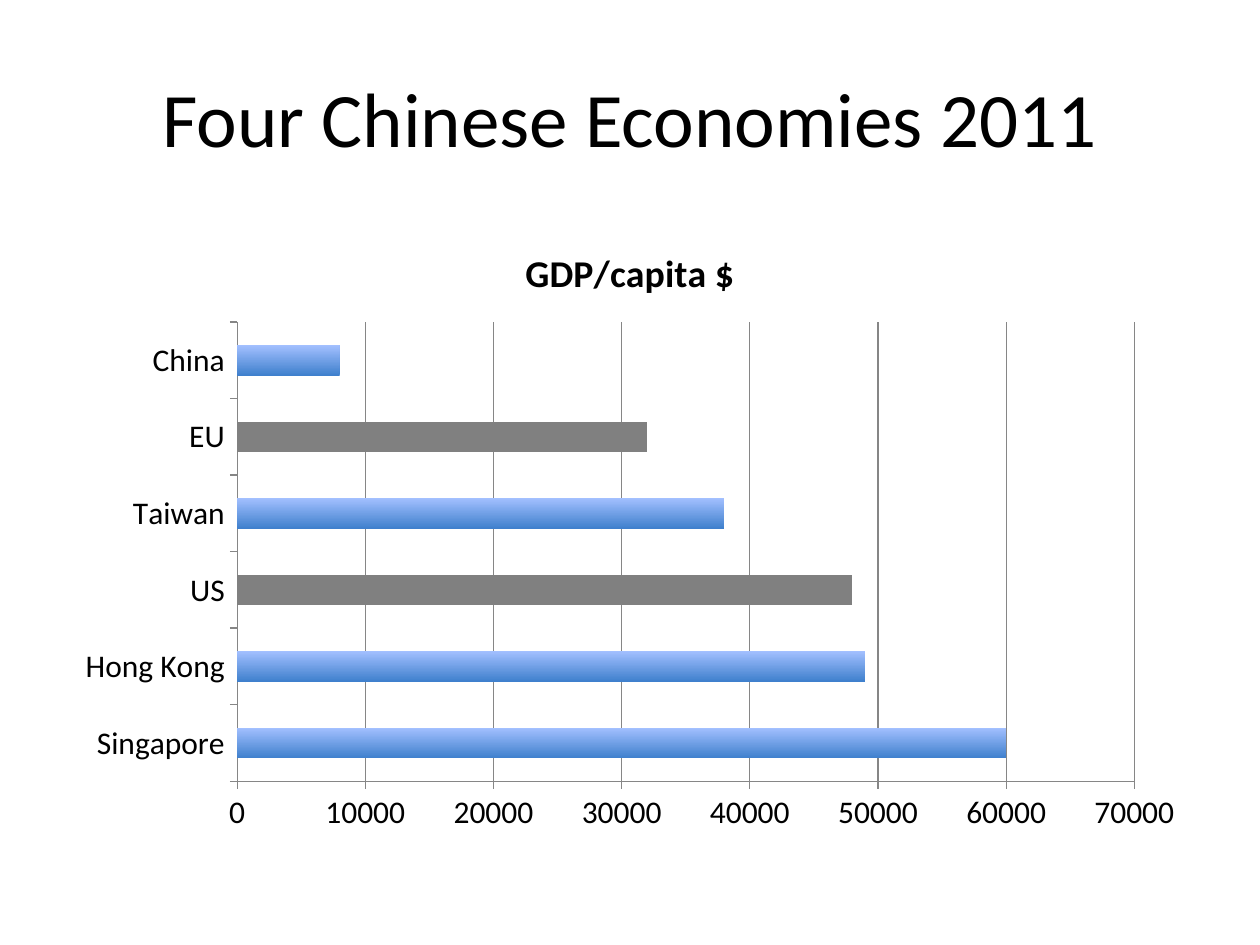
from pptx import Presentation
from pptx.chart.data import CategoryChartData
from pptx.dml.color import RGBColor
from pptx.enum.chart import XL_CHART_TYPE, XL_TICK_MARK
from pptx.enum.text import MSO_ANCHOR, PP_ALIGN
from pptx.util import Pt

BAR = XL_CHART_TYPE.BAR_CLUSTERED
OUTSIDE = XL_TICK_MARK.OUTSIDE
MIDDLE = MSO_ANCHOR.MIDDLE
CENTER = PP_ALIGN.CENTER

FONT = "Calibri"
COLORS = {"text": "000000", "axis": "868686", "region": "808080",
          "bar_low": "3F80CD", "bar_high": "A3C0FF"}
GDP = {"Singapore": 60000, "Hong Kong": 49000, "US": 48000,
       "Taiwan": 38000, "EU": 32000, "China": 8000}
COMPARISONS = ("US", "EU")


def rgb(name):
    return RGBColor.from_string(COLORS[name])


def format_font(font, size, bold=False, color="text"):
    font.name = FONT
    font.size = Pt(size)
    font.bold = bold
    font.color.rgb = rgb(color)


def write_text(tf, text, align=CENTER, **fmt):
    p = tf.paragraphs[0]
    p.alignment = align
    r = p.add_run()
    r.text = text
    format_font(r.font, **fmt)


def add_title(s, text):
    sp = s.shapes.title
    sp.left, sp.top, sp.width, sp.height = Pt(36), Pt(21.6), Pt(648), Pt(90)
    sp.text_frame.vertical_anchor = MIDDLE
    write_text(sp.text_frame, text, size=44)


def format_line(line):
    line.color.rgb = rgb("axis")
    line.width = Pt(0.75)


def format_bars(plot):
    plot.gap_width = 150
    plot.vary_by_categories = False
    series = plot.series[0]
    series.invert_if_negative = False
    # Gradient for the Chinese economies
    fill = series.format.fill
    fill.gradient()
    fill.gradient_angle = 90
    for stop, color in zip(fill.gradient_stops, ("bar_low", "bar_high")):
        stop.color.rgb = rgb(color)
    # Plain grey for the regions they are compared with
    for i, name in enumerate(GDP):
        if name in COMPARISONS:
            fill = series.points[i].format.fill
            fill.solid()
            fill.fore_color.rgb = rgb("region")


def add_bar_chart(s, title):
    data = CategoryChartData()
    data.categories = list(GDP)
    data.add_series("Series 1", list(GDP.values()))
    chart = s.shapes.add_chart(BAR, Pt(36), Pt(126), Pt(648), Pt(356.4),
                               data).chart
    format_font(chart.font, 18)
    chart.has_legend = False
    chart.has_title = True
    write_text(chart.chart_title.text_frame, title, size=21.6, bold=True)
    chart.chart_title.include_in_layout = False

    # Axes
    for axis in (chart.category_axis, chart.value_axis):
        axis.major_tick_mark = OUTSIDE
        format_line(axis.format.line)
    values = chart.value_axis
    values.minimum_scale, values.maximum_scale = 0, 70000
    values.major_unit = 10000
    values.has_major_gridlines = True
    format_line(values.major_gridlines.format.line)
    values.tick_labels.number_format = "General"
    values.tick_labels.number_format_is_linked = False

    format_bars(chart.plots[0])


def main():
    prs = Presentation()
    prs.slide_width, prs.slide_height = Pt(720), Pt(540)
    s = prs.slides.add_slide(prs.slide_layouts[5])
    add_title(s, "Four Chinese Economies 2011")
    add_bar_chart(s, "GDP/capita $")
    prs.save("out.pptx")


if __name__ == "__main__":
    main()
